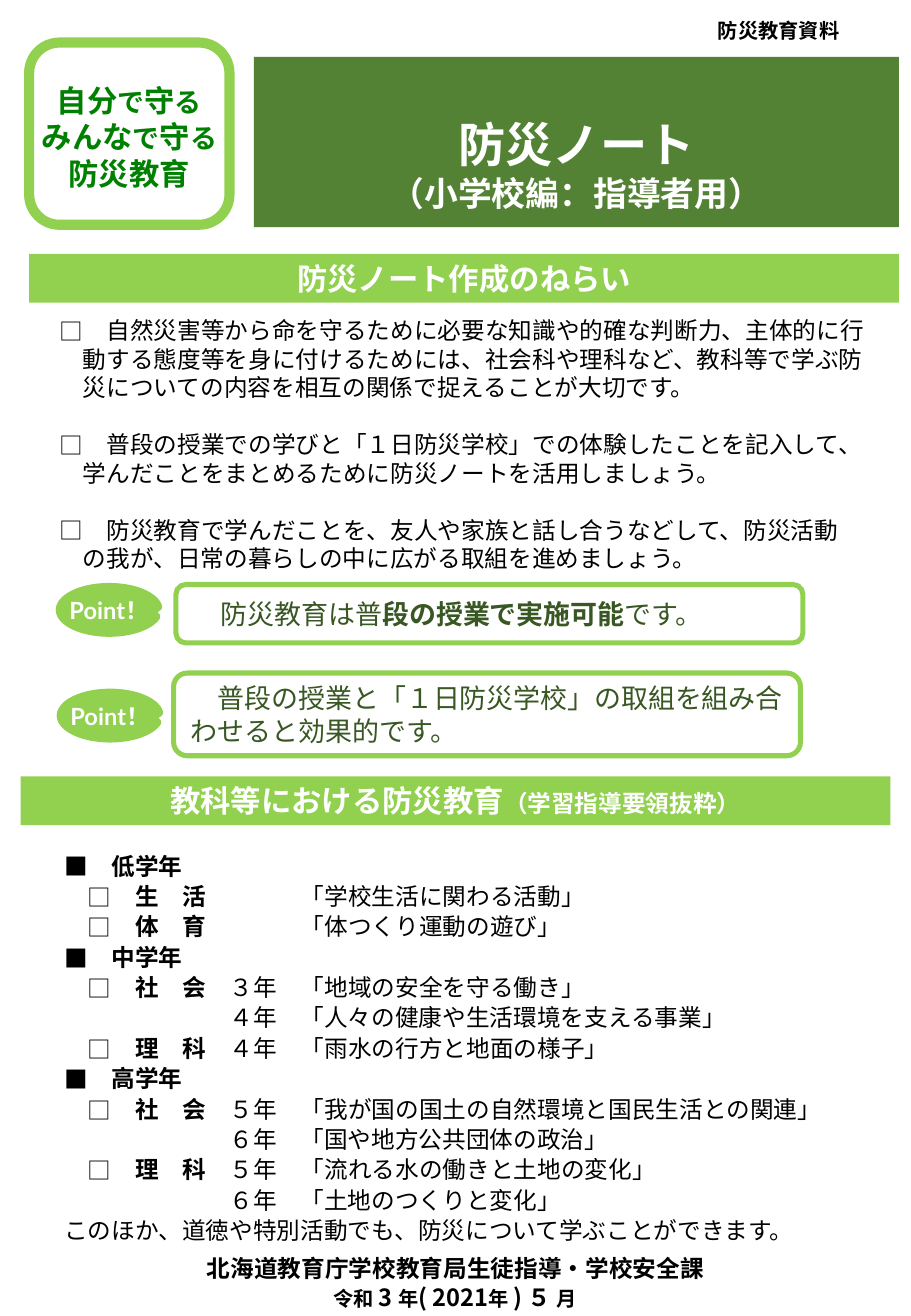
from dataclasses import dataclass

from lxml import etree
from pptx import Presentation
from pptx import util as u
from pptx.dml.color import RGBColor
from pptx.enum import shapes, text
from pptx.oxml.ns import qn


@dataclass(frozen=True)
class Theme:
    white: str = "FFFFFF"
    black: str = "000000"
    dark: str = "548235"
    lime: str = "92D050"
    leaf: str = "008000"
    moss: str = "385723"
    face: str = "Noto Sans CJK JP"
    title: int = 28
    sub: int = 20
    head: int = 18
    card: int = 16
    body: int = 14
    small: int = 12


T = Theme()
MID = text.PP_ALIGN.CENTER
LEFT = text.PP_ALIGN.LEFT
KIND = shapes.MSO_SHAPE

AIMS = [
    "　自然災害等から命を守るために必要な知識や的確な判断力、主体的に行\v"
    "動する態度等を身に付けるためには、社会科や理科など、教科等で学ぶ防\v"
    "災についての内容を相互の関係で捉えることが大切です。",
    "　普段の授業での学びと「１日防災学校」での体験したことを記入して、\v"
    "学んだことをまとめるために防災ノートを活用しましょう。",
    "　防災教育で学んだことを、友人や家族と話し合うなどして、防災活動\v"
    "の我が、日常の暮らしの中に広がる取組を進めましょう。",
]

# Each stage holds rows of subject, school year and topic.
STAGES = {
    "低学年": [("生　活", "", "「学校生活に関わる活動」"),
            ("体　育", "", "「体つくり運動の遊び」")],
    "中学年": [("社　会", "３年", "「地域の安全を守る働き」"),
            ("", "４年", "「人々の健康や生活環境を支える事業」"),
            ("理　科", "４年", "「雨水の行方と地面の様子」")],
    "高学年": [("社　会", "５年", "「我が国の国土の自然環境と国民生活との関連」"),
            ("", "６年", "「国や地方公共団体の政治」"),
            ("理　科", "５年", "「流れる水の働きと土地の変化」"),
            ("", "６年", "「土地のつくりと変化」")],
}


def style(run, size, bold, hue, face=T.face):
    font = run.font
    font.size, font.bold, font.name = u.Pt(size), bold, face
    font.color.rgb = RGBColor.from_string(hue)
    east = etree.Element(qn("a:ea"), typeface=T.face)
    run._r.rPr.find(qn("a:latin")).addnext(east)


def space(para, lead, after=0):
    para.line_spacing = u.Pt(lead)
    para.space_before, para.space_after = u.Pt(0), u.Pt(after)


def indent(para, chars, hang=0, mark=None):
    """Indent by whole body characters, with an optional hanging bullet."""
    prop = para._p.get_or_add_pPr()
    prop.set("marL", str(u.Pt(chars * T.body)))
    prop.set("indent", str(u.Pt(-hang * T.body)))
    if mark:
        etree.SubElement(prop, qn("a:buFont"), typeface=T.face)
        etree.SubElement(prop, qn("a:buChar"), char=mark)
    else:
        etree.SubElement(prop, qn("a:buNone"))


def write(frame, lines, hue, align=MID, face=T.face):
    """Fill a frame with lines, each a list of (text, size, bold)."""
    for i, line in enumerate(lines):
        para = frame.add_paragraph() if i else frame.paragraphs[0]
        para.alignment = align
        space(para, 1.2 * max(size for _, size, _ in line))
        for words, size, bold in line:
            run = para.add_run()
            run.text = words
            style(run, size, bold, hue, face)


def place(shape, spot):
    shape.left, shape.top, shape.width, shape.height = map(u.Cm, spot)


def inset(frame, left=0, top=0, right=0, low=0):
    frame.margin_left, frame.margin_top = u.Cm(left), u.Cm(top)
    frame.margin_right, frame.margin_bottom = u.Cm(right), u.Cm(low)


def block(slide, kind, spot, fill=None, line=None, width=0):
    shape = slide.shapes.add_shape(kind, *map(u.Cm, spot))
    shape.shadow.inherit = False
    if fill:
        shape.fill.solid()
        shape.fill.fore_color.rgb = RGBColor.from_string(fill)
    else:
        shape.fill.background()
    if line:
        shape.line.color.rgb = RGBColor.from_string(line)
        shape.line.width = u.Pt(width)
    else:
        shape.line.fill.background()
    shape.text_frame.word_wrap = True
    return shape


def banner(slide, left, top, line):
    bar = block(slide, KIND.RECTANGLE, (left, top, 18.19, 1.02), T.lime)
    write(bar.text_frame, [line], T.white)


def point(slide, left, top):
    call = block(slide, KIND.OVAL_CALLOUT, (left, top, 2.13, 1.02),
                 T.lime, T.lime, 3)
    call.adjustments[0], call.adjustments[1] = 0.44, 0.04
    frame = call.text_frame
    inset(frame)
    frame.word_wrap = False
    write(frame, [[("Point！", T.body, True)]], T.white, face="Lato")


def card(slide, spot, line, left, first=0):
    frame = block(slide, KIND.ROUNDED_RECTANGLE, spot,
                  line=T.lime, width=3).text_frame
    inset(frame, left)
    write(frame, [line], T.moss, LEFT)
    frame.paragraphs[0]._p.pPr.set("indent", str(u.Pt(first)))


def title(shape):
    place(shape, (5.31, 1.19, 13.49, 3.56))
    shape.fill.solid()
    shape.fill.fore_color.rgb = RGBColor.from_string(T.dark)
    frame = shape.text_frame
    frame.auto_size = text.MSO_AUTO_SIZE.NONE
    frame.vertical_anchor = text.MSO_ANCHOR.TOP
    frame.margin_top = u.Cm(1.23)
    write(frame, [[("防災ノート", T.title, True)],
                  [("（小学校編：指導者用）", T.sub, True)]], T.white, face="Arial")


def aims(shape):
    place(shape, (1.24, 6.6, 17.55, 5.38))
    frame = shape.text_frame
    frame.auto_size = text.MSO_AUTO_SIZE.NONE
    inset(frame)
    frame.text = "\n".join(["", ""])
    for para, words in zip([*frame.paragraphs, frame.add_paragraph()], AIMS):
        para.text = words
        space(para, 16.9, 16.9)
        indent(para, 1, 1, "□")
        for run in para.runs:
            style(run, T.body, False, T.black)


def topics(shape):
    place(shape, (1.09, 17.63, 16.84, 8.59))
    frame = shape.text_frame
    frame.auto_size = text.MSO_AUTO_SIZE.NONE
    rows = []
    for stage, items in STAGES.items():
        rows.append(([(stage, True)], (2, 2, "■")))
        for subject, year, topic in items:
            if not subject:
                rows.append(([(f"{year}　{topic}", False)], (7,)))
                continue
            tail = f"{year}　{topic}" if year else topic
            bits = [(subject, True), ("　", False), (tail, False)]
            rows.append((bits, (3, 2, "□")))
    rows.append(([("このほか、道徳や特別活動でも、防災について学ぶことができます。", False)], (0,)))
    write(frame, [[(words, T.body, bold) for words, bold in bits]
                  for bits, _ in rows], T.black, LEFT)
    for para, (bits, left) in zip(frame.paragraphs, rows):
        space(para, 18)
        indent(para, *left)
        if bits[-1][0].startswith("「"):  # no year: widen the gap by three characters
            para.runs[1]._r.rPr.set("spc", str(3 * T.body * 100))


def main():
    deck = Presentation()
    deck.slide_width, deck.slide_height = u.Cm(19.05), u.Cm(27.51)
    slide = deck.slides.add_slide(deck.slide_layouts[3])
    head, left, right = slide.placeholders
    title(head)
    aims(left)
    topics(right)

    label = block(slide, KIND.RECTANGLE, (13.77, 0.18, 5.03, 0.69), T.white).text_frame
    label.vertical_anchor = text.MSO_ANCHOR.TOP
    label.margin_top = u.Cm(0.2)
    write(label, [[("防災教育資料", T.small, True)]], T.black)

    badge = block(slide, KIND.ROUNDED_RECTANGLE, (0.61, 0.89, 4.19, 3.81),
                  line=T.lime, width=6).text_frame
    inset(badge, top=0.12)
    guard = [("で", T.card, True), ("守", T.head, True), ("る", T.card, True)]
    write(badge, [[("自分", T.head, True), *guard], [("みんな", T.head, True), *guard],
                  [("防災教育", T.head, True)]], T.leaf)

    banner(slide, 0.61, 5.31, [("防災ノート作成のねらい", T.head, True)])
    banner(slide, 0.43, 16.23, [("教科等における防災教育", T.head, True),
                                ("（学習指導要領抜粋）", T.body, True)])
    point(slide, 1.22, 12.24)
    card(slide, (3.68, 12.22, 13.11, 1.22),
         [("防災教育は普", T.card, False), ("段の授業で実施可能", T.card, True),
          ("です。", T.card, False)], 0.88)
    point(slide, 1.24, 14.45)
    card(slide, (3.63, 14.07, 13.11, 1.73),
         [("普段の授業と「１日防災学校」の取組を組み合わせると効果的です。", T.card, False)],
         0.28, T.card)

    foot = slide.shapes.add_textbox(*map(u.Cm, (0, 26.09, 19.05, 1.42))).text_frame
    foot.word_wrap = True
    date = [("令和 ", T.small), ("3 ", T.body), ("年", T.small), ("( 2021", T.body),
            ("年 ", T.small), (") ５ ", T.body), ("月", T.small)]
    write(foot, [[("北海道教育庁学校教育局生徒指導・学校安全課", T.body, True)],
                 [(words, size, True) for words, size in date]], T.black)
    deck.save("out.pptx")


if __name__ == "__main__":
    main()
